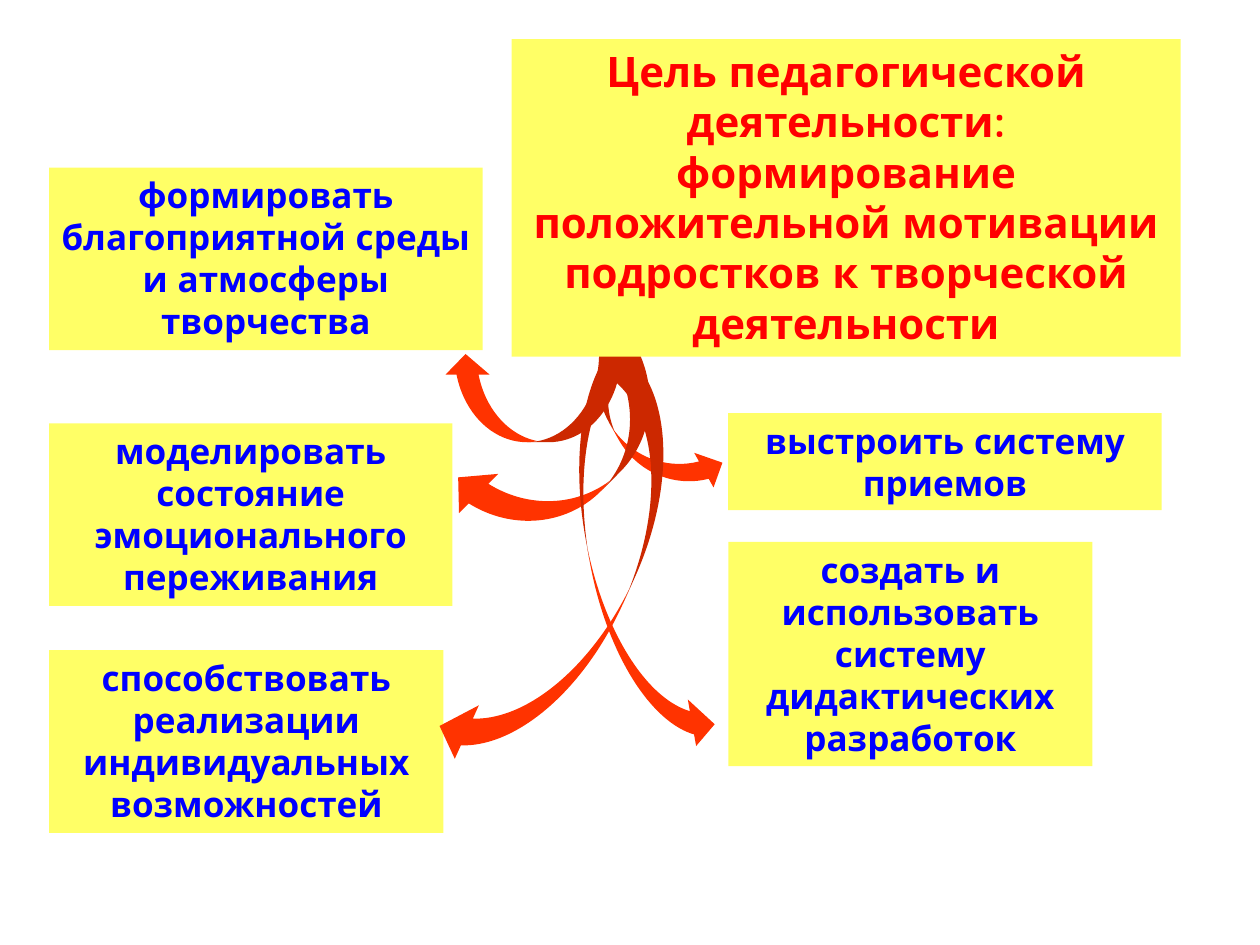
from pptx import Presentation
from pptx.dml.color import RGBColor
from pptx.enum.shapes import MSO_SHAPE
from pptx.enum.text import MSO_ANCHOR, MSO_AUTO_SIZE, PP_ALIGN
from pptx.util import Inches, Pt

RECT = MSO_SHAPE.RECTANGLE
UP = MSO_SHAPE.CURVED_UP_ARROW
RIGHT = MSO_SHAPE.CURVED_RIGHT_ARROW
CENTER = PP_ALIGN.CENTER
TOP = MSO_ANCHOR.TOP
GROW = MSO_AUTO_SIZE.SHAPE_TO_FIT_TEXT


class Theme:
    font = "Quicksand"
    panel = RGBColor(0xFF, 0xFF, 0x66)
    arrow = RGBColor(0xFF, 0x33, 0x00)
    goal = RGBColor(0xFF, 0x00, 0x00)
    task = RGBColor(0x00, 0x00, 0xFF)
    goal_size = Pt(24)
    task_size = Pt(20)


class Board:
    def __init__(self, slide, theme):
        self.slide = slide
        self.theme = theme

    def shape(self, kind, place, fill):
        item = self.slide.shapes.add_shape(kind, *map(Inches, place))
        item.shadow.inherit = False
        item.fill.solid()
        item.fill.fore_color.rgb = fill
        item.line.fill.background()
        return item

    def panel(self, place, lines, size, color):
        frame = self.shape(RECT, place, self.theme.panel).text_frame
        frame.word_wrap = True
        frame.auto_size = GROW
        frame.vertical_anchor = TOP
        frame.text = "\n".join(lines)
        for para in frame.paragraphs:
            para.alignment = CENTER
            font = para.font
            font.name = self.theme.font
            font.size = size
            font.bold = True
            font.color.rgb = color

    def task(self, place, text):
        self.panel(place, [text], self.theme.task_size, self.theme.task)

    def goal(self, place, lines):
        self.panel(place, lines, self.theme.goal_size, self.theme.goal)

    def arrow(self, kind, place, turn=0, flips=()):
        item = self.shape(kind, place, self.theme.arrow)
        item.rotation = turn
        for flip in flips:
            item._element.spPr.xfrm.set(flip, "1")
        if kind == UP:
            item.adjustments[2] = 0.234


def main():
    deck = Presentation()
    deck.slide_width, deck.slide_height = Inches(10), Inches(7.5)
    board = Board(deck.slides.add_slide(deck.slide_layouts[6]), Theme())

    # Tasks in a left and a right column
    left, right = 0.39, 5.78
    tasks = [
        (left, 1.33, 3.44, 1.45, "формировать благоприятной среды и атмосферы творчества"),
        (left, 3.36, 3.2, 1.45, "моделировать состояние эмоционального переживания"),
        (left, 5.16, 3.13, 1.45, "способствовать реализации индивидуальных возможностей"),
        (right, 3.28, 3.44, 0.77, "выстроить систему приемов"),
        (right, 4.3, 2.89, 1.78, "создать и использовать систему дидактических разработок"),
    ]
    for *place, text in tasks:
        board.task(place, text)

    # Curved arrows from the goal to each task
    board.arrow(UP, (3.52, 2.81, 1.41, 0.7), 0, ["flipH"])
    board.arrow(RIGHT, (4.85, 2.54, 0.63, 1.52), 330.8)
    board.arrow(UP, (3.5, 3.11, 1.99, 0.88), 314.9, ["flipH"])
    board.arrow(UP, (2.77, 4.08, 3.55, 0.93), 294.2, ["flipH"])
    board.arrow(UP, (3.35, 3.96, 3.38, 0.75), 259.9, ["flipH", "flipV"])

    # Goal, in front of the arrow tails
    board.goal((4.06, 0.31, 5.31, 2.52), [
        "Цель педагогической деятельности:",
        "формирование положительной мотивации подростков к творческой деятельности",
    ])

    deck.save("out.pptx")


if __name__ == "__main__":
    main()
